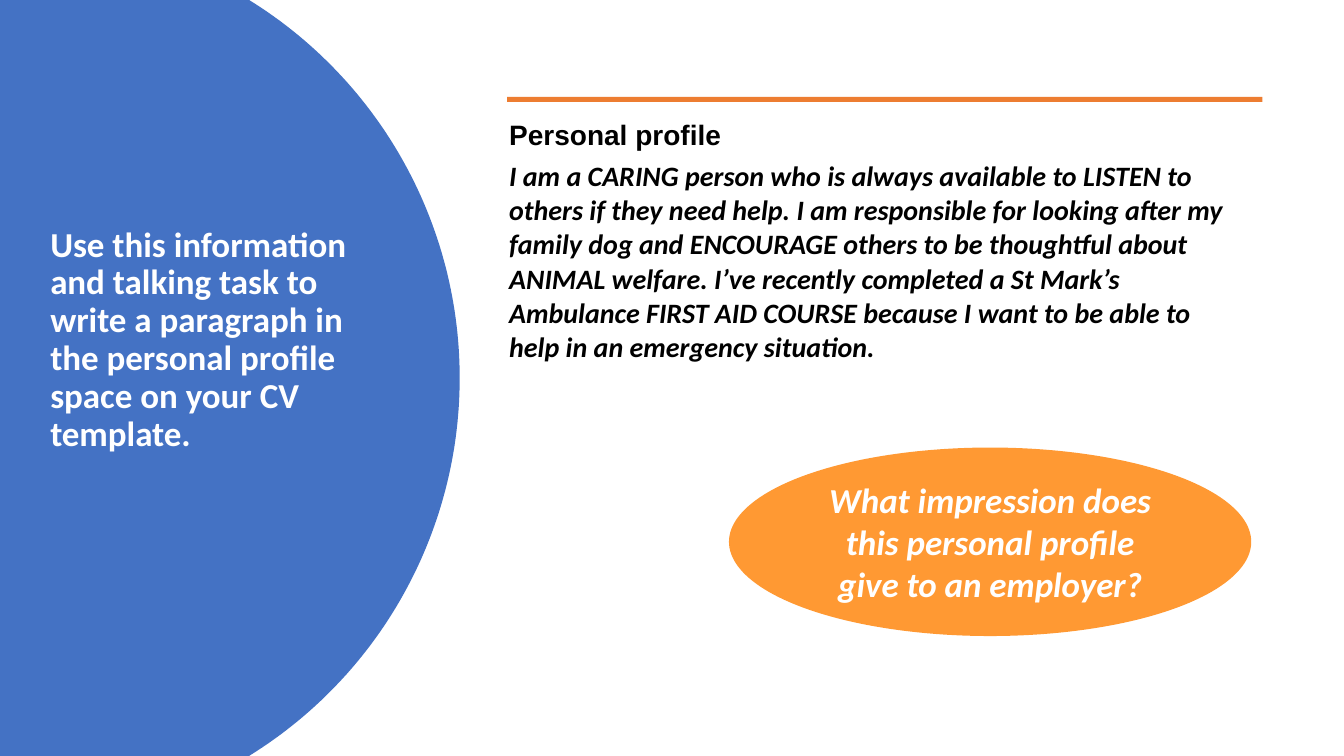
from math import asin, cos, sin

from pptx import Presentation
from pptx.dml.color import RGBColor
from pptx.enum.shapes import MSO_SHAPE
from pptx.enum.text import MSO_ANCHOR, PP_ALIGN
from pptx.util import Inches, Pt

RECTANGLE, OVAL = MSO_SHAPE.RECTANGLE, MSO_SHAPE.OVAL
MIDDLE, CENTER = MSO_ANCHOR.MIDDLE, PP_ALIGN.CENTER


def paint(shape, color):
    shape.fill.solid()
    shape.fill.fore_color.rgb = RGBColor.from_string(color)
    shape.line.fill.background()
    shape.shadow.inherit = False


def write(paragraph, text, color, formats):
    run = paragraph.add_run()
    run.text = text
    run.font.color.rgb = RGBColor.from_string(color)
    for key, value in formats.items():
        setattr(run.font, key, value)


prs = Presentation()
prs.slide_width, prs.slide_height = Inches(13.33), Inches(7.5)
slide = prs.slides.add_slide(prs.slide_layouts[6])
shapes = slide.shapes

center_x, center_y, radius, steps = 0.15, 3.75, 4.41, 120
reach = asin(center_y / radius)
angles = [reach * (2 * step / steps - 1) for step in range(steps + 1)]
arc = [(Inches(center_x + radius * cos(a)), Inches(center_y + radius * sin(a)))
       for a in angles]
outline = shapes.build_freeform(0, 0)
outline.add_line_segments(arc + [(0, Inches(7.5))], close=True)
paint(outline.convert_to_shape(), "4472C4")

profile_table = shapes.add_table(
    1, 1, Inches(4.93), Inches(1.19), Inches(7.35), Inches(3.95)).table
profile_table.first_row = False
profile_table.horz_banding = False
profile = profile_table.cell(0, 0)
profile.fill.solid()
profile.fill.fore_color.rgb = RGBColor.from_string("FFFFFF")
profile.margin_left = profile.margin_right = Inches(0.12)
profile.margin_top = profile.margin_bottom = 0
heading = profile.text_frame.paragraphs[0]
heading.space_after = Pt(6)
write(heading, "Personal profile", "000000",
      {"name": "Arial", "size": Pt(20), "bold": True})
write(profile.text_frame.add_paragraph(),
      "I am a CARING person who is always available to LISTEN to others if they "
      "need help. I am responsible for looking after my family dog and ENCOURAGE "
      "others to be thoughtful about ANIMAL welfare. I’ve recently completed a "
      "St Mark’s Ambulance FIRST AID COURSE because I want to be able to help in "
      "an emergency situation.",
      "000000", {"name": "Calibri", "size": Pt(20), "bold": True, "italic": True})

rule = shapes.add_shape(RECTANGLE, Inches(5.03), Inches(0.96), Inches(7.49), Inches(0.05))
paint(rule, "ED7D31")

task = shapes.add_textbox(Inches(0.4), Inches(2.65), Inches(3.48), Inches(1.45)).text_frame
task.word_wrap = True
task.vertical_anchor = MIDDLE
task.paragraphs[0].line_spacing = 0.9
write(task.paragraphs[0],
      "Use this information and talking task to write a paragraph in the personal "
      "profile space on your CV template.",
      "FFFFFF", {"name": "Calibri", "size": Pt(25), "bold": True})

question = shapes.add_shape(OVAL, Inches(7.23), Inches(4.44), Inches(5.18), Inches(1.87))
paint(question, "FF9933")
question.text_frame.word_wrap = True
question.text_frame.vertical_anchor = MIDDLE
question.text_frame.paragraphs[0].alignment = CENTER
write(question.text_frame.paragraphs[0],
      "What impression does this personal profile give to an employer?",
      "FFFFFF", {"name": "Calibri", "size": Pt(25), "bold": True, "italic": True})

prs.save("out.pptx")
